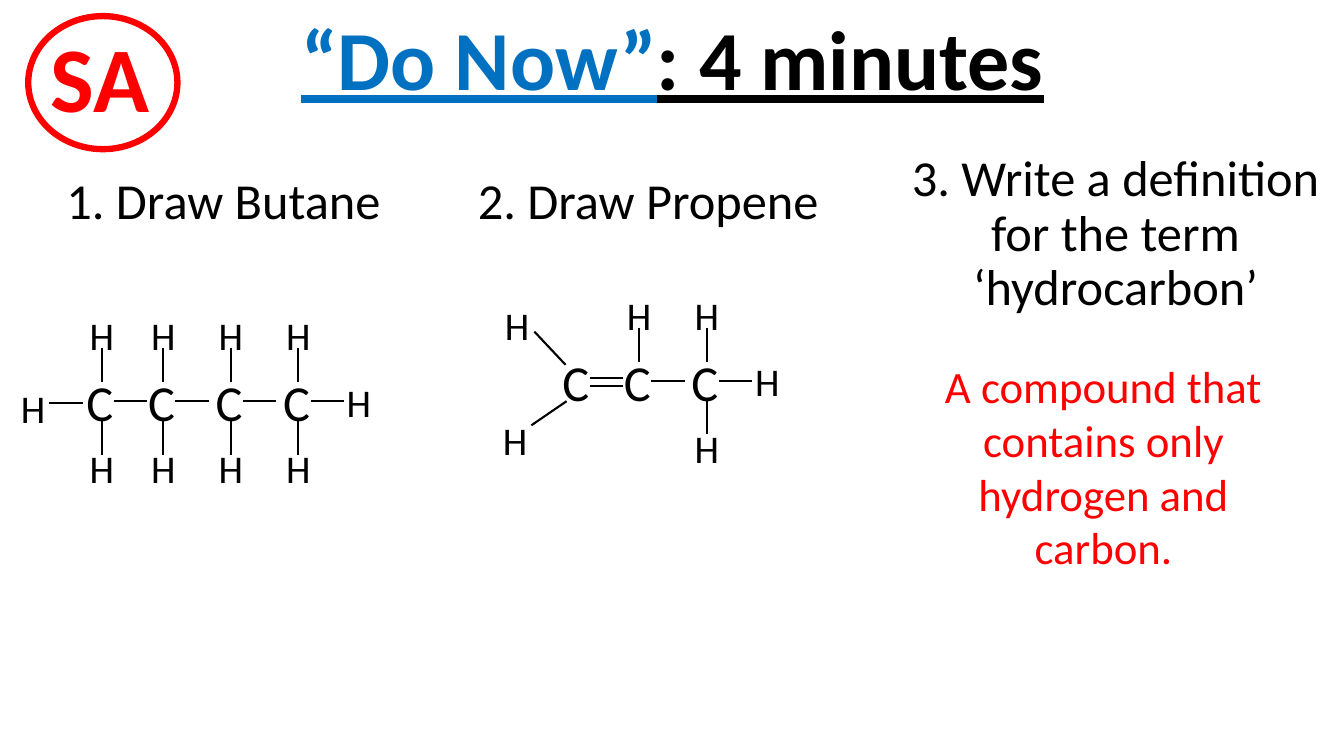
"""Build a chemistry starter slide with butane and propene structures."""
from lxml.etree import SubElement
from pptx import Presentation
from pptx.dml.color import RGBColor
from pptx.enum.shapes import MSO_CONNECTOR, MSO_SHAPE
from pptx.enum.text import MSO_ANCHOR, MSO_AUTO_SIZE, PP_ALIGN
from pptx.oxml.ns import qn
from pptx.util import Inches, Pt

COLOURS = {"ink": "000000", "blue": "0070C0", "red": "FF0000"}
BUTANE_CARBONS = [1.01, 1.62, 2.29, 2.96]
BUTANE_ROW = 3.63
PROPENE_CARBONS = [5.73, 6.34, 7.01]
PROPENE_ROW = 3.43


def rgb(name):
    return RGBColor.from_string(COLOURS[name])


def add_text(slide, text, left, top, width, height, size=36, colour="ink", bold=False,
             underline=False, align=PP_ALIGN.LEFT, anchor=MSO_ANCHOR.TOP,
             spacing=None, before=0, grow=False):
    """Add a text box; text is a string or a list of (text, colour) runs."""
    box = slide.shapes.add_textbox(Inches(left), Inches(top), Inches(width), Inches(height))
    frame = box.text_frame
    frame.word_wrap = True
    frame.auto_size = MSO_AUTO_SIZE.SHAPE_TO_FIT_TEXT if grow else MSO_AUTO_SIZE.NONE
    frame.vertical_anchor = anchor
    paragraph = frame.paragraphs[0]
    paragraph.alignment = align
    paragraph.line_spacing = spacing
    paragraph.space_before = Pt(before)
    for words, run_colour in [(text, colour)] if isinstance(text, str) else text:
        run = paragraph.add_run()
        run.text = words
        run.font.name = "Calibri"
        run.font.size = Pt(size)
        run.font.bold = bold
        run.font.underline = underline
        run.font.color.rgb = rgb(run_colour)


def add_bond(slide, x1, y1, x2, y2):
    bond = slide.shapes.add_connector(
        MSO_CONNECTOR.STRAIGHT, Inches(x1), Inches(y1), Inches(x2), Inches(y2))
    bond.line.color.rgb = rgb("ink")
    bond.line.width = Pt(1.5)
    SubElement(bond._element.spPr, qn("a:effectLst"))


def add_carbon(slide, x, row):
    add_text(slide, "C", x - 0.25, row, 0.5, 0.71, grow=True)


def add_hydrogen(slide, left, top):
    add_text(slide, "H", left, top, 0.48, 0.57, size=28, grow=True)


def add_hydrogen_above(slide, x, row):
    add_bond(slide, x, row - 0.18, x, row + 0.16)
    add_hydrogen(slide, x - 0.22, row - 0.59)


def add_hydrogen_below(slide, x, row):
    add_bond(slide, x, row + 0.54, x, row + 0.88)
    add_hydrogen(slide, x - 0.22, row + 0.73)


def add_right_bond(slide, x, row, offset=0.35):
    add_bond(slide, x + 0.12, row + offset, x + 0.45, row + offset)


def add_hydrogen_right(slide, x, row):
    add_right_bond(slide, x, row)
    add_hydrogen(slide, x + 0.38, row + 0.07)


def add_butane(slide):
    for x in BUTANE_CARBONS:
        add_carbon(slide, x, BUTANE_ROW)
        add_hydrogen_above(slide, x, BUTANE_ROW)
        add_hydrogen_below(slide, x, BUTANE_ROW)
    for x in BUTANE_CARBONS[:-1]:
        add_right_bond(slide, x, BUTANE_ROW)
    add_hydrogen_right(slide, BUTANE_CARBONS[-1], BUTANE_ROW)
    add_bond(slide, 0.49, 4, 0.82, 4)
    add_hydrogen(slide, 0.11, 3.76)


def add_propene(slide):
    first, middle, last = PROPENE_CARBONS
    for x in PROPENE_CARBONS:
        add_carbon(slide, x, PROPENE_ROW)
    for offset in (0.32, 0.4):
        add_right_bond(slide, first, PROPENE_ROW, offset)
    add_right_bond(slide, middle, PROPENE_ROW)
    for x in (middle, last):
        add_hydrogen_above(slide, x, PROPENE_ROW)
    add_hydrogen_below(slide, last, PROPENE_ROW)
    add_hydrogen_right(slide, last, PROPENE_ROW)
    add_bond(slide, 5.3, 3.29, 5.61, 3.62)
    add_hydrogen(slide, 4.91, 2.94)
    add_bond(slide, 5.27, 4.22, 5.62, 3.98)
    add_hydrogen(slide, 4.89, 4.08)


def add_badge(slide):
    add_text(slide, "SA", 0.25, 0.15, 1.48, 1.21, size=66, colour="red", bold=True,
             align=PP_ALIGN.CENTER, grow=True)
    ring = slide.shapes.add_shape(
        MSO_SHAPE.OVAL, Inches(0.28), Inches(0.16), Inches(1.48), Inches(1.32))
    ring.shadow.inherit = False
    ring.fill.background()
    ring.line.color.rgb = rgb("red")
    ring.line.width = Pt(4.5)


def main():
    deck = Presentation()
    deck.slide_width, deck.slide_height = Inches(13.33), Inches(7.5)
    slide = deck.slides.add_slide(deck.slide_layouts[6])
    add_text(slide, [("“Do Now”", "blue"), (": 4 minutes", "ink")], 1.67, 0.08, 10, 1.05,
             size=60, bold=True, underline=True, align=PP_ALIGN.CENTER,
             anchor=MSO_ANCHOR.BOTTOM, spacing=0.9)
    for task, left in (("1. Draw Butane", 0.56), ("2. Draw Propene", 4.64)):
        add_text(slide, task, left, 1.7, 3.81, 0.76, spacing=0.9, before=10)
    add_text(slide, "3. Write a definition for the term ‘hydrocarbon’", 8.88, 1.47, 4.37, 1.82,
             align=PP_ALIGN.CENTER, spacing=0.9, before=10)
    add_butane(slide)
    add_propene(slide)
    add_text(slide, "A compound that contains only hydrogen and carbon.", 8.88, 3.51, 4.13, 1.72,
             size=32, colour="red", align=PP_ALIGN.CENTER, grow=True)
    add_badge(slide)
    deck.save("out.pptx")


if __name__ == "__main__":
    main()
